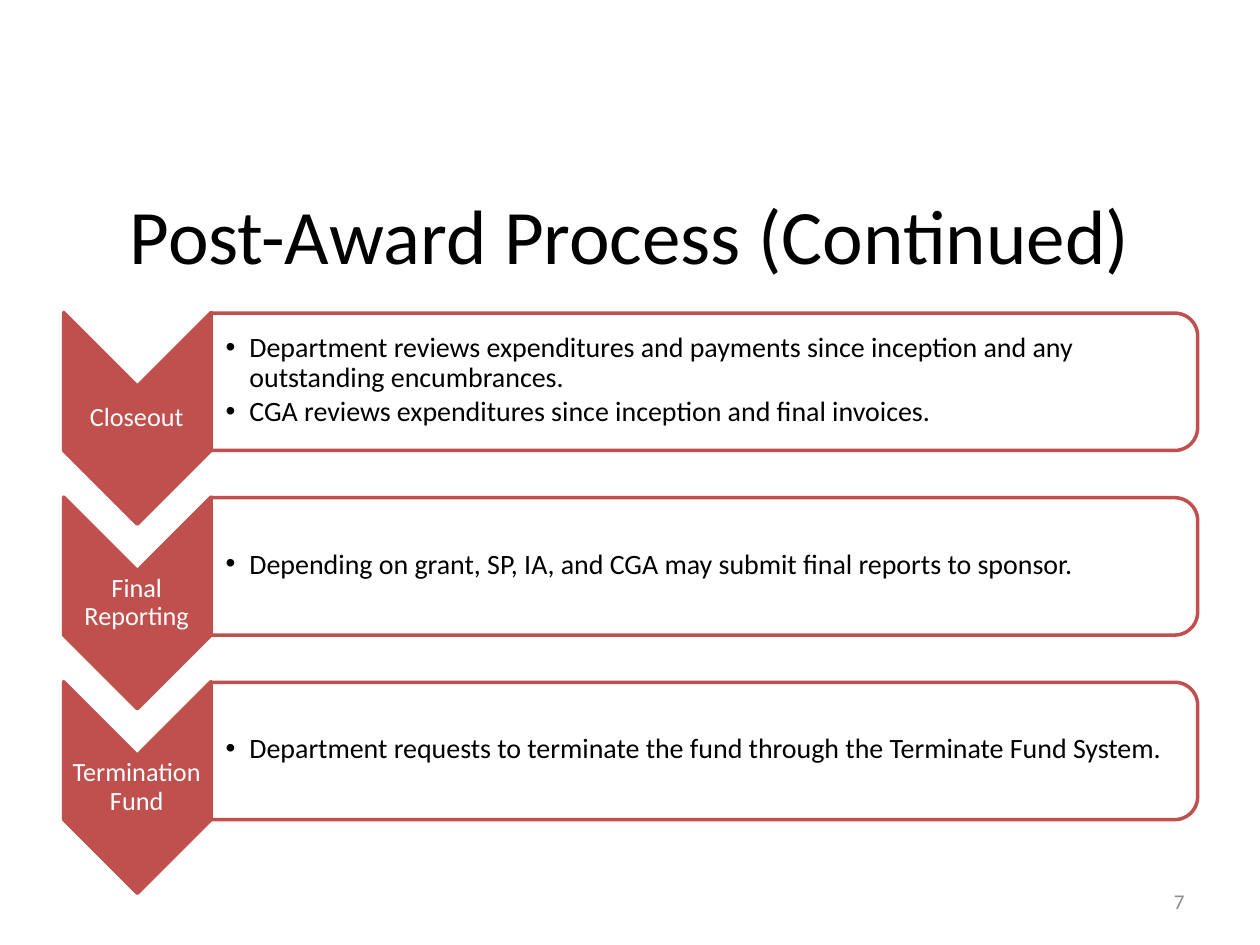
from dataclasses import dataclass

from lxml.etree import SubElement
from pptx import Presentation
from pptx.dml.color import RGBColor
from pptx.enum.shapes import MSO_SHAPE
from pptx.enum.text import MSO_ANCHOR, PP_ALIGN
from pptx.oxml.ns import qn
from pptx.util import Inches, Pt


@dataclass(frozen=True)
class Theme:
    font: str = "Calibri"
    red: str = "C0504D"
    white: str = "FFFFFF"
    black: str = "000000"
    gray: str = "8C8C8C"
    title: int = 44
    body: int = 16
    label: int = 15
    small: int = 12


class Deck:
    def __init__(self, theme):
        self.theme = theme
        self.file = Presentation()
        self.file.slide_width = Inches(10)
        self.file.slide_height = Inches(7.5)
        self.slide = self.file.slides.add_slide(self.file.slide_layouts[5])

    def style(self, frame, size, color, align):
        frame.word_wrap = True
        frame.vertical_anchor = MSO_ANCHOR.MIDDLE
        for para in frame.paragraphs:
            para.alignment = align
            for run in para.runs:
                run.font.name = self.theme.font
                run.font.size = Pt(size)
                run.font.color.rgb = RGBColor.from_string(color)

    def title(self, text, box):
        shape = self.slide.shapes.title
        shape.left, shape.top, shape.width, shape.height = map(Inches, box)
        shape.text_frame.text = text
        self.style(shape.text_frame, self.theme.title, self.theme.black, PP_ALIGN.CENTER)

    def turned(self, kind, center, width, height, fill, alpha=100):
        x, y = center
        shape = self.slide.shapes.add_shape(
            kind, Inches(x - width / 2), Inches(y - height / 2), Inches(width), Inches(height))
        shape.rotation = 90
        shape.shadow.inherit = False
        shape.fill.solid()
        shape.fill.fore_color.rgb = RGBColor.from_string(fill)
        if alpha < 100:
            color = shape.fill._xPr.find(qn("a:solidFill"))[0]
            SubElement(color, qn("a:alpha"), val=str(alpha * 1000))
        shape.line.color.rgb = RGBColor.from_string(self.theme.red)
        shape.line.width = Pt(2)

    def text(self, text, box, size, color, align, inset=None):
        frame = self.slide.shapes.add_textbox(*map(Inches, box)).text_frame
        frame.text = text
        self.style(frame, size, color, align)
        if inset is not None:
            frame.margin_left = Inches(inset)
            frame.margin_right = frame.margin_top = frame.margin_bottom = Inches(0.01)
        return frame

    def label(self, text, box):
        frame = self.text(text, box, self.theme.label, self.theme.white, PP_ALIGN.CENTER, 0.01)
        para = frame.paragraphs[0]
        para.line_spacing = 0.9
        para.space_after = Pt(5.25)

    def bullets(self, items, box):
        frame = self.text("\n".join(items), box, self.theme.body,
                          self.theme.black, PP_ALIGN.LEFT, 0.12)
        for para in frame.paragraphs:
            para.level = 1
            para.line_spacing = 0.9
            para.space_after = Pt(2.4)
            props = para._p.get_or_add_pPr()
            props.set("marL", str(Inches(0.19)))
            props.set("indent", str(-Inches(0.19)))
            SubElement(props, qn("a:buFont"), typeface="Arial")
            SubElement(props, qn("a:buChar"), char="•")

    def step(self, name, items, top):
        self.turned(MSO_SHAPE.CHEVRON, (1.09, top + 0.84), 1.68, 1.17, self.theme.red)
        self.label(name, (0.5, top + 0.59, 1.17, 0.5))
        self.turned(MSO_SHAPE.ROUND_2_SAME_RECTANGLE, (5.59, top + 0.55),
                    1.09, 7.83, self.theme.white, 90)
        self.bullets(items, (1.67, top + 0.05, 7.77, 0.98))


def main():
    theme = Theme()
    deck = Deck(theme)
    deck.title("Post-Award Process (Continued)", (0.5, 1.23, 9, 1.25))
    steps = [
        ("Closeout", [
            "Department reviews expenditures and payments since inception and any outstanding encumbrances.",
            "CGA reviews expenditures since inception and final invoices."]),
        ("Final Reporting", [
            "Depending on grant, SP, IA, and CGA may submit final reports to sponsor."]),
        ("Termination Fund", [
            "Department requests to terminate the fund through the Terminate Fund System."]),
    ]
    for row, (name, items) in enumerate(steps):
        deck.step(name, items, 2.48 + row * 1.465)
    deck.text("7", (7.17, 6.95, 2.33, 0.4), theme.small, theme.gray, PP_ALIGN.RIGHT)
    deck.file.save("out.pptx")


if __name__ == "__main__":
    main()
